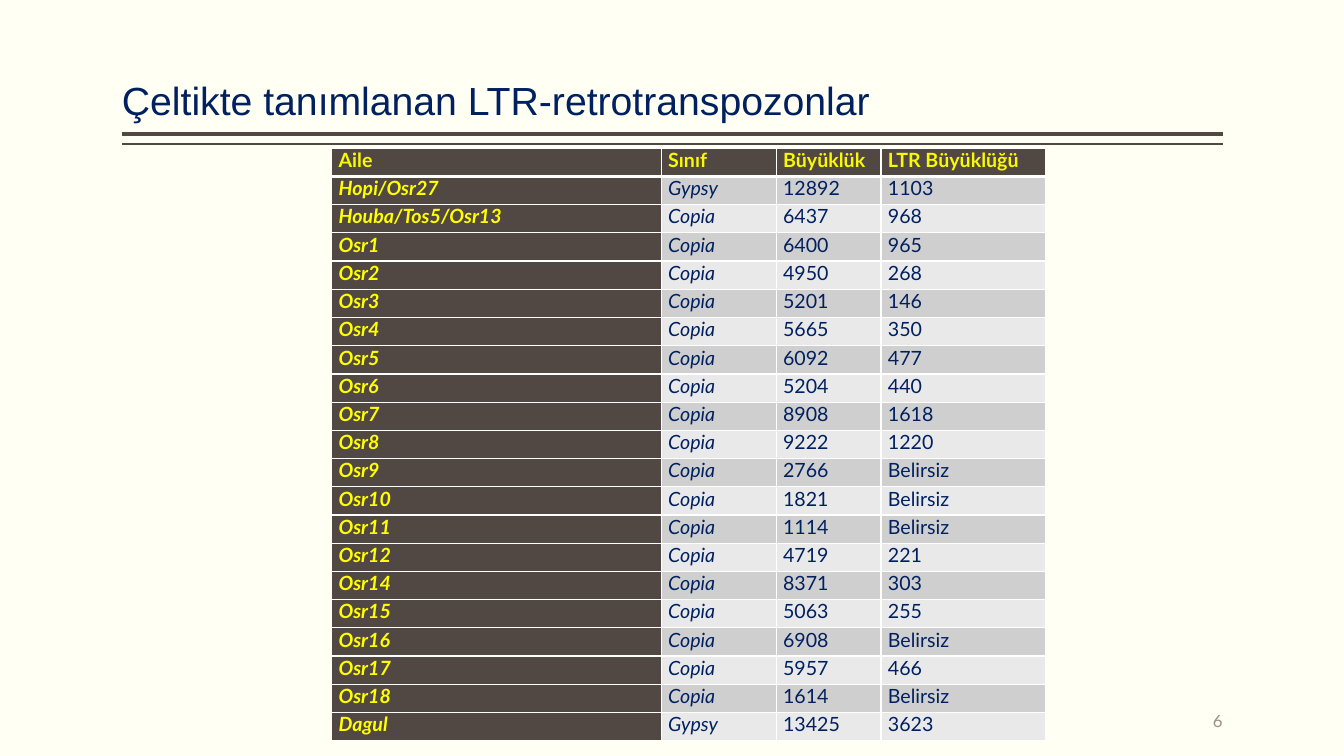
import dataclasses

import pptx
import pptx.dml.color
import pptx.enum.shapes
import pptx.enum.text
import pptx.oxml
import pptx.oxml.ns
import pptx.util

Pt = pptx.util.Pt
Align = pptx.enum.text.PP_ALIGN
Anchor = pptx.enum.text.MSO_ANCHOR


@dataclasses.dataclass(frozen=True)
class Theme:
    background: str = "FFFFF3"
    navy: str = "002060"
    brown: str = "514843"
    header_text: str = "F9F900"
    family_text: str = "FFFF00"
    bands: tuple = ("D0CFCF", "E9E9E9")
    border: str = "FFFFFF"
    number: str = "9D8F88"
    title_font: str = "Arial"
    body_font: str = "Lato"
    title_size: int = 28
    table_size: int = 14
    number_size: int = 12


THEME = Theme()
LEFT, RIGHT = 87.12, 873.36

HEADERS = ("Aile", "Sınıf", "Büyüklük", "LTR Büyüklüğü")
FAMILIES = (
    ("Hopi/Osr27", "Gypsy", "12892", "1103"),
    ("Houba/Tos5/Osr13", "Copia", "6437", "968"),
    ("Osr1", "Copia", "6400", "965"),
    ("Osr2", "Copia", "4950", "268"),
    ("Osr3", "Copia", "5201", "146"),
    ("Osr4", "Copia", "5665", "350"),
    ("Osr5", "Copia", "6092", "477"),
    ("Osr6", "Copia", "5204", "440"),
    ("Osr7", "Copia", "8908", "1618"),
    ("Osr8", "Copia", "9222", "1220"),
    ("Osr9", "Copia", "2766", "Belirsiz"),
    ("Osr10", "Copia", "1821", "Belirsiz"),
    ("Osr11", "Copia", "1114", "Belirsiz"),
    ("Osr12", "Copia", "4719", "221"),
    ("Osr14", "Copia", "8371", "303"),
    ("Osr15", "Copia", "5063", "255"),
    ("Osr16", "Copia", "6908", "Belirsiz"),
    ("Osr17", "Copia", "5957", "466"),
    ("Osr18", "Copia", "1614", "Belirsiz"),
    ("Dagul", "Gypsy", "13425", "3623"),
)


def color(value):
    return pptx.dml.color.RGBColor.from_string(value)


def set_all(target, formats):
    for name, value in formats.items():
        setattr(target, name, value)


def write(frame, text, align, ink, **font):
    para = frame.paragraphs[0]
    para.alignment = align
    span = para.add_run()
    span.text = text
    set_all(span.font, font)
    span.font.color.rgb = color(ink)
    return para


def place(box, left, top, width, height, anchor):
    set_all(box, {"left": Pt(left), "top": Pt(top),
                  "width": Pt(width), "height": Pt(height)})
    set_all(box.text_frame, {
        "word_wrap": True, "auto_size": pptx.enum.text.MSO_AUTO_SIZE.NONE,
        "vertical_anchor": anchor, "margin_left": 0, "margin_right": 0,
        "margin_top": Pt(3.6), "margin_bottom": Pt(3.6)})


def add_title(page, text):
    box = page.shapes.title
    place(box, LEFT, 5.76, RIGHT - LEFT, 86.4, Anchor.BOTTOM)
    para = write(box.text_frame, text, Align.LEFT, THEME.navy,
                 name=THEME.title_font, size=Pt(THEME.title_size))
    para.line_spacing = 0.9


def add_rule(page, top, weight):
    rule = page.shapes.add_connector(
        pptx.enum.shapes.MSO_CONNECTOR.STRAIGHT,
        Pt(RIGHT), Pt(top), Pt(LEFT), Pt(top))
    rule.line.color.rgb = color(THEME.brown)
    rule.line.width = Pt(weight)
    pptx.oxml.ns.qn("a:effectLst")
    rule._element.spPr.append(pptx.oxml.parse_xml(
        f'<a:effectLst {pptx.oxml.ns.nsdecls("a")}/>'))


def add_borders(cell, top, bottom):
    properties = cell._tc.get_or_add_tcPr()
    for side, weight in (("L", 1), ("R", 1), ("T", top), ("B", bottom)):
        properties.append(pptx.oxml.parse_xml(
            f'<a:ln{side} {pptx.oxml.ns.nsdecls("a")} w="{Pt(weight)}">'
            f'<a:solidFill><a:srgbClr val="{THEME.border}"/></a:solidFill>'
            f'</a:ln{side}>'))


def cell_style(row, column):
    """Return fill, text colour, bold and italic for a table position."""
    if row == 0:
        return THEME.brown, THEME.header_text, True, False
    if column == 0:
        return THEME.brown, THEME.family_text, True, True
    return THEME.bands[(row - 1) % 2], THEME.navy, False, column == 1


def add_family_table(page):
    rows = (HEADERS, *FAMILIES)
    widths = (235.44, 82.08, 74.88, 117.36)
    row_height = 20.16
    table = page.shapes.add_table(
        len(rows), len(widths), Pt(236.88), Pt(105.84),
        Pt(sum(widths)), Pt(row_height * len(rows))).table
    for column, width in zip(table.columns, widths):
        column.width = Pt(width)
    for row, texts in enumerate(rows):
        table.rows[row].height = Pt(row_height)
        for column, text in enumerate(texts):
            cell = table.cell(row, column)
            fill, ink, bold, italic = cell_style(row, column)
            set_all(cell, {"margin_left": Pt(5), "margin_right": Pt(5),
                           "margin_top": 0, "margin_bottom": 0})
            add_borders(cell, 3 if row == 1 else 1, 3 if row == 0 else 1)
            cell.fill.solid()
            cell.fill.fore_color.rgb = color(fill)
            write(cell.text_frame, text, Align.JUSTIFY, ink,
                  name=THEME.body_font, size=Pt(THEME.table_size),
                  bold=bold, italic=italic)


def add_page_number(page, text):
    box = page.shapes.add_textbox(0, 0, 0, 0)
    place(box, RIGHT - 144, 500.4, 144, 28.8, Anchor.MIDDLE)
    write(box.text_frame, text, Align.RIGHT, THEME.number,
          name=THEME.body_font, size=Pt(THEME.number_size))


def main():
    deck = pptx.Presentation()
    set_all(deck, {"slide_width": Pt(960), "slide_height": Pt(540)})
    page = deck.slides.add_slide(deck.slide_layouts.get_by_name("Title Only"))
    page.background.fill.solid()
    page.background.fill.fore_color.rgb = color(THEME.background)

    # Heading with its double rule
    add_rule(page, 95.76, 3)
    add_rule(page, 102.96, 1)
    add_title(page, "Çeltikte tanımlanan LTR-retrotranspozonlar")

    # Retrotransposon families
    add_family_table(page)

    # Footer
    add_page_number(page, "6")
    deck.save("out.pptx")


if __name__ == "__main__":
    main()
